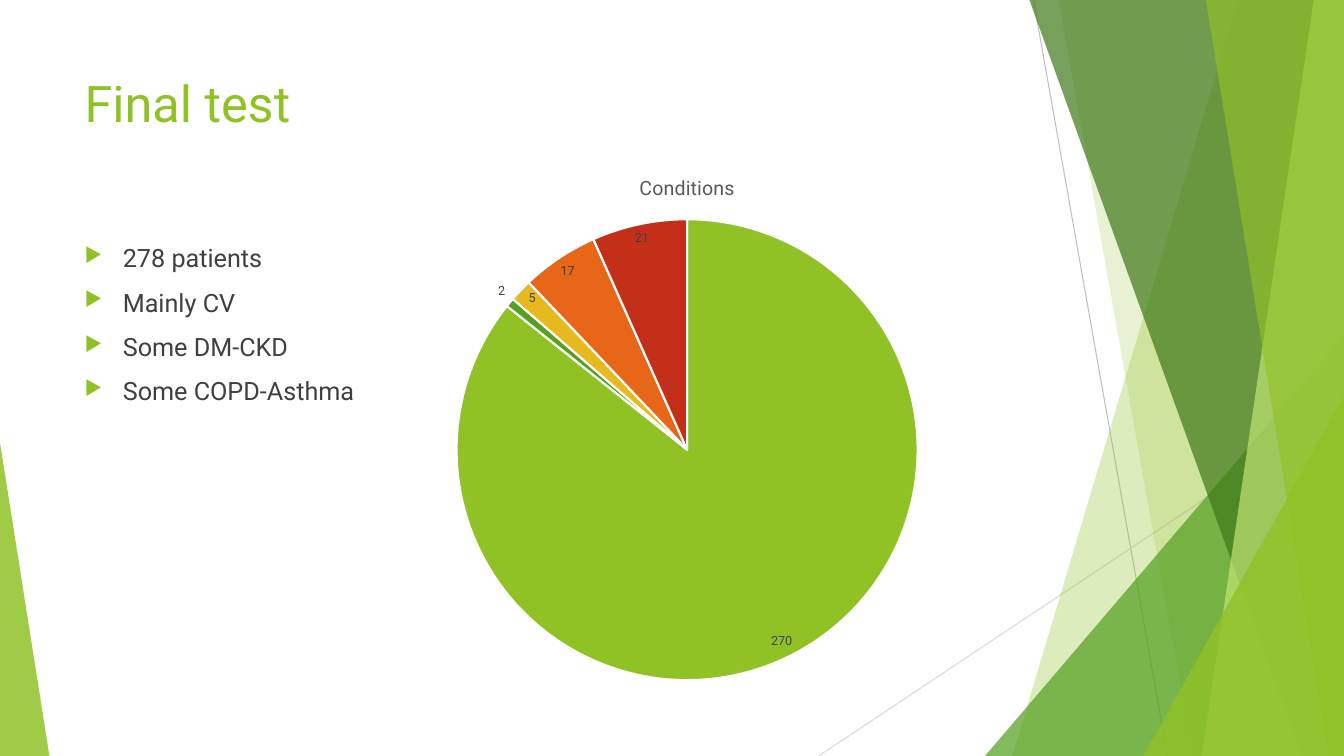
from dataclasses import dataclass

from lxml.etree import SubElement
from pptx import Presentation
from pptx.chart.data import CategoryChartData
from pptx.dml.color import RGBColor
from pptx.enum.chart import XL_CHART_TYPE, XL_LABEL_POSITION
from pptx.enum.shapes import MSO_CONNECTOR, MSO_SHAPE
from pptx.oxml import parse_xml
from pptx.oxml.ns import nsdecls, qn
from pptx.shapes.autoshape import Shape
from pptx.slide import Slide
from pptx.text.text import Font, TextFrame
from pptx.util import Emu, Pt

PX = 9144
WIDTH, HEIGHT = 1333, 750
FONT = "Roboto"
GREEN, DARK_GREEN, TEXT_GRAY = "90C226", "54A021", "404040"


@dataclass(frozen=True)
class Ray:
    start: tuple[int, int]
    end: tuple[int, int]
    color: str


@dataclass(frozen=True)
class Band:
    top_left: int
    bottom_left: int
    color: str
    opacity: int


@dataclass(frozen=True)
class Corner:
    left: int
    top: int
    width: int
    apex: int
    color: str
    opacity: int


RAYS = [
    Ray((1025, 0), (1158, HEIGHT), "BFBFBF"),
    Ray((WIDTH, 403), (812, HEIGHT), "D9D9D9"),
]
FACETS = [
    Band(1228, 1004, GREEN, 30),
    Band(1050, 1183, GREEN, 20),
    Corner(977, 333, 356, 1, DARK_GREEN, 72),
    Band(1021, 1291, "3F7819", 70),
    Band(1303, 1192, "C0E474", 70),
    Band(1196, 1318, GREEN, 65),
    Corner(1134, 393, 199, 1, GREEN, 80),
    Corner(0, 439, 49, 0, GREEN, 85),
]
BULLETS = ["278 patients", "Mainly CV", "Some DM-CKD", "Some COPD-Asthma"]
CONDITIONS = [
    ("1", 270, GREEN),
    ("2", 2, DARK_GREEN),
    ("3", 5, "E6B91E"),
    ("4", 17, "E76618"),
    ("5", 21, "C42F1A"),
]


def px(length: int) -> Emu:
    return Emu(length * PX)


def rgb(color: str) -> RGBColor:
    return RGBColor.from_string(color)


def style_font(font: Font, size: int, color: str) -> None:
    font.name = FONT
    font.size = Pt(size)
    font.bold = False
    font.color.rgb = rgb(color)


def add_ray(slide: Slide, ray: Ray) -> None:
    connector = slide.shapes.add_connector(
        MSO_CONNECTOR.STRAIGHT, *map(px, ray.start + ray.end)
    )
    connector.line.color.rgb = rgb(ray.color)
    connector.line.width = Pt(0.75)
    SubElement(connector.element.spPr, qn("a:effectLst"))


def build_band(slide: Slide, band: Band) -> Shape:
    builder = slide.shapes.build_freeform(band.top_left, 0, scale=PX)
    builder.add_line_segments(
        [(WIDTH, 0), (WIDTH, HEIGHT), (band.bottom_left, HEIGHT)]
    )
    return builder.convert_to_shape()


def build_corner(slide: Slide, corner: Corner) -> Shape:
    shape = slide.shapes.add_shape(
        MSO_SHAPE.ISOSCELES_TRIANGLE,
        px(corner.left),
        px(corner.top),
        px(corner.width),
        px(HEIGHT - corner.top),
    )
    shape.adjustments[0] = corner.apex
    return shape


def add_facet(slide: Slide, facet: Band | Corner) -> None:
    build = build_band if isinstance(facet, Band) else build_corner
    shape = build(slide, facet)
    shape.shadow.inherit = False
    shape.fill.solid()
    shape.fill.fore_color.rgb = rgb(facet.color)
    shape.line.fill.background()
    color = shape.element.spPr.find(qn("a:solidFill")).find(qn("a:srgbClr"))
    SubElement(color, qn("a:alpha"), val=str(facet.opacity * 1000))


def add_text(
    slide: Slide, top: int, height: int, text: str, size: int, color: str
) -> TextFrame:
    box = slide.shapes.add_textbox(px(74), px(top), px(940), px(height))
    text_frame = box.text_frame
    text_frame.word_wrap = True
    text_frame.text = text
    for paragraph in text_frame.paragraphs:
        for run in paragraph.runs:
            style_font(run.font, size, color)
    return text_frame


def add_bullets(slide: Slide) -> None:
    text_frame = add_text(slide, 236, 424, "\n".join(BULLETS), 18, TEXT_GRAY)
    for paragraph in text_frame.paragraphs:
        paragraph.space_before = Pt(10)
        properties = paragraph._p.get_or_add_pPr()
        properties.set("marL", str(px(38)))
        properties.set("indent", str(px(-38)))
        color = SubElement(properties, qn("a:buClr"))
        SubElement(color, qn("a:srgbClr"), val=GREEN)
        SubElement(properties, qn("a:buSzPct"), val="80000")
        SubElement(properties, qn("a:buChar"), char="▶")


def add_conditions_chart(slide: Slide) -> None:
    chart_data = CategoryChartData()
    chart_data.categories = [name for name, _, _ in CONDITIONS]
    chart_data.add_series("Series 1", [value for _, value, _ in CONDITIONS])
    chart = slide.shapes.add_chart(
        XL_CHART_TYPE.PIE, px(319), px(153), px(725), px(538), chart_data
    ).chart
    style_font(chart.font, 10, "000000")
    chart.has_legend = False
    chart.has_title = True
    title = chart.chart_title.text_frame
    title.text = "Conditions"
    style_font(title.paragraphs[0].runs[0].font, 14, "595959")

    plot = chart.plots[0]
    plot.vary_by_categories = True
    series = plot.series[0]
    for index, (_, _, color) in enumerate(CONDITIONS):
        slice_format = series.points[index].format
        slice_format.fill.solid()
        slice_format.fill.fore_color.rgb = rgb(color)
        slice_format.line.color.rgb = rgb("FFFFFF")
        slice_format.line.width = Pt(1.5)
    labels = series.data_labels
    labels.show_value = True
    labels.position = XL_LABEL_POSITION.BEST_FIT
    style_font(labels.font, 9, TEXT_GRAY)

    plot_area = chart.element.chart.plotArea
    for layout in plot_area.findall(qn("c:layout")):
        plot_area.remove(layout)
    plot_area.insert(0, parse_xml(
        f'<c:layout {nsdecls("c")}><c:manualLayout>'
        '<c:layoutTarget val="inner"/>'
        '<c:xMode val="edge"/><c:yMode val="edge"/>'
        '<c:x val="0.18"/><c:y val="0.12"/>'
        '<c:w val="0.64"/><c:h val="0.85"/>'
        '</c:manualLayout></c:layout>'
    ))


def main() -> None:
    presentation = Presentation()
    presentation.slide_width = px(WIDTH)
    presentation.slide_height = px(HEIGHT)
    slide = presentation.slides.add_slide(presentation.slide_layouts[6])
    for ray in RAYS:
        add_ray(slide, ray)
    for facet in FACETS:
        add_facet(slide, facet)
    add_text(slide, 67, 144, "Final test", 36, GREEN)
    add_bullets(slide)
    add_conditions_chart(slide)
    presentation.save("out.pptx")


if __name__ == "__main__":
    main()
